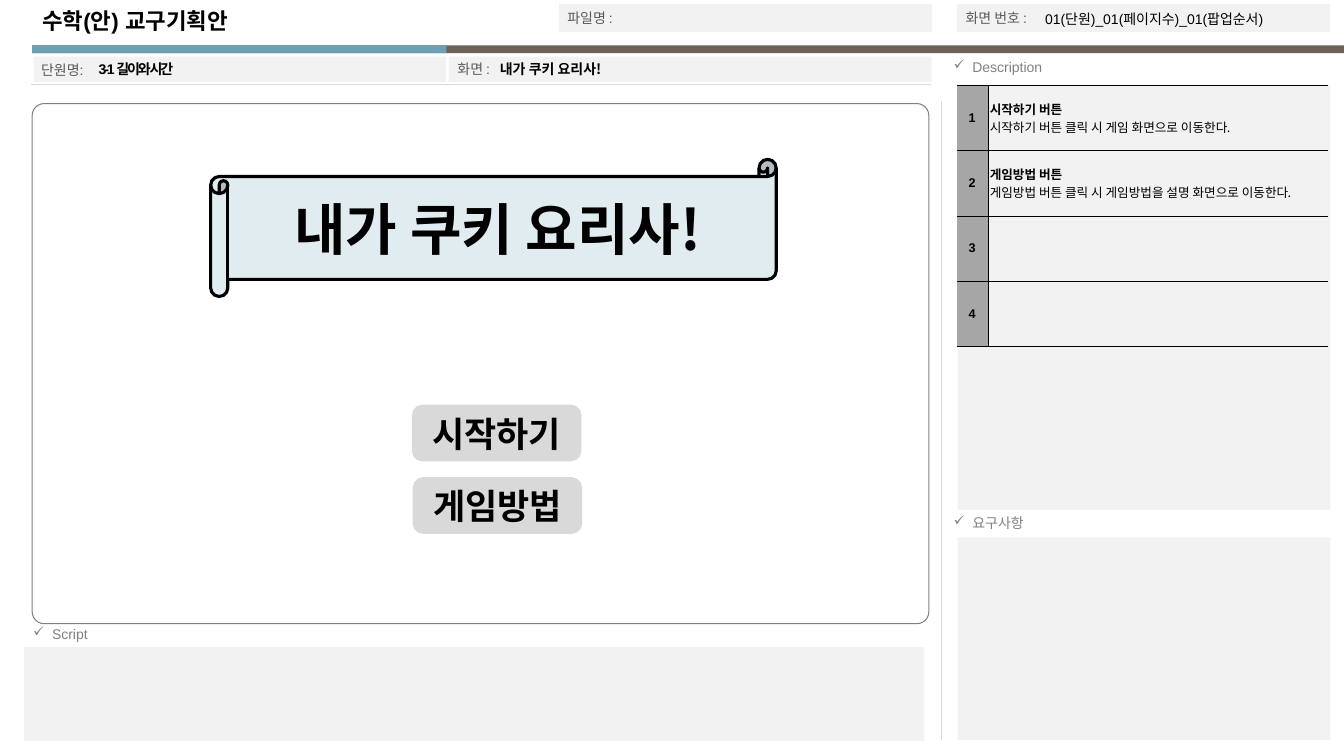
from dataclasses import dataclass

from lxml import etree
from pptx import Presentation
from pptx.dml.color import RGBColor
from pptx.enum import shapes, text
from pptx.oxml import ns
from pptx.util import Pt


@dataclass(frozen=True)
class Theme:
    latin: str = "Arial"
    korean: str = "Noto Sans CJK KR"
    black: str = "000000"
    white: str = "FFFFFF"
    panel: str = "F2F2F2"
    rule: str = "D9D9D9"
    heading: str = "808080"
    label: str = "595959"
    number: str = "A6A6A6"
    teal: str = "6BA1B2"
    brown: str = "6D6359"
    scroll: str = "E1ECF0"
    cell: float = 9
    body: float = 10
    title: float = 16
    button: float = 25
    banner: float = 40


THEME = Theme()
SHAPE = shapes.MSO_SHAPE
ANCHOR = text.MSO_ANCHOR


def points(*lengths):
    return [Pt(length) for length in lengths]


def add_xml(parent, tag, **attributes):
    return etree.SubElement(parent, ns.qn(tag), attributes)


def style(para, size, color=THEME.black, bold=False, latin=THEME.latin, spacing=None):
    font = para.font
    font.size = Pt(size)
    font.bold = bold
    font.name = latin
    font.color.rgb = RGBColor.from_string(color)
    properties = para._p.pPr.find(ns.qn("a:defRPr"))
    add_xml(properties, "a:ea", typeface=THEME.korean)
    if spacing is not None:
        properties.set("spc", str(spacing))


def add_block(page, area, fill, kind=SHAPE.RECTANGLE, line=None, width=0.75):
    block = page.shapes.add_shape(kind, *points(*area))
    block.shadow.inherit = False
    block.fill.solid()
    block.fill.fore_color.rgb = RGBColor.from_string(fill)
    if line:
        block.line.color.rgb = RGBColor.from_string(line)
        block.line.width = Pt(width)
    else:
        block.line.fill.background()
    return block


def add_captioned(page, area, caption, size, fill, kind, line):
    block = add_block(page, area, fill, kind, line, 2.25)
    frame = block.text_frame
    frame.word_wrap = True
    frame.vertical_anchor = ANCHOR.MIDDLE
    para = frame.paragraphs[0]
    para.text = caption
    para.alignment = text.PP_ALIGN.CENTER
    style(para, size, bold=True, latin=THEME.korean)


def add_text(page, area, words, color=THEME.black, anchor=ANCHOR.MIDDLE, **look):
    box = page.shapes.add_textbox(*points(*area))
    frame = box.text_frame
    frame.word_wrap = True
    frame.vertical_anchor = anchor
    para = frame.paragraphs[0]
    para.text = words
    style(para, THEME.body, color, **look)
    return para


def add_section(page, heading_area, words, panel_area):
    para = add_text(page, heading_area, words, THEME.heading, ANCHOR.TOP)
    properties = para._p.get_or_add_pPr()
    properties.set("marL", str(Pt(13.5)))
    properties.set("indent", str(-Pt(13.5)))
    bullet = etree.Element(ns.qn("a:buChar"), {"char": "✓"})
    properties.insert(0, bullet)
    add_block(page, panel_area, THEME.panel)


def add_field(page, panel_area, label_area, words):
    add_block(page, panel_area, THEME.panel)
    add_text(page, label_area, words, THEME.label)


def add_rule(page, *ends):
    rule = page.shapes.add_connector(shapes.MSO_CONNECTOR.STRAIGHT, *points(*ends))
    rule.line.color.rgb = RGBColor.from_string(THEME.rule)
    rule.line.width = Pt(0.75)
    add_xml(rule._element.spPr, "a:effectLst")


def set_borders(cell, drawn):
    properties = cell._tc.get_or_add_tcPr()
    for index, side in enumerate("LRTB"):
        border = etree.Element(ns.qn(f"a:ln{side}"), {"w": str(Pt(0.25))})
        if side in drawn:
            add_xml(add_xml(border, "a:solidFill"), "a:srgbClr", val=THEME.black)
        else:
            add_xml(border, "a:noFill")
        properties.insert(index, border)


def fill_cell(cell, lines, borders, centered=False):
    cell.vertical_anchor = ANCHOR.MIDDLE
    cell.margin_left = cell.margin_right = Pt(1.44)
    cell.margin_top = cell.margin_bottom = Pt(1.44)
    frame = cell.text_frame
    frame.text = "\n".join(lines)
    for index, para in enumerate(frame.paragraphs):
        latin = THEME.latin if centered else THEME.korean
        style(para, THEME.cell, bold=index == 0, latin=latin)
        if centered:
            para.alignment = text.PP_ALIGN.CENTER
            para.space_before = Pt(1.8)
    set_borders(cell, borders)


def add_descriptions(page, descriptions):
    frame = page.shapes.add_table(len(descriptions), 2, *points(683.3, 60.8, 265, 186.8))
    table = frame.table
    table.first_row = table.horz_banding = False
    for column, width in zip(table.columns, points(22.3, 242.7)):
        column.width = width
    for number, (row, lines) in enumerate(zip(table.rows, descriptions), 1):
        row.height = Pt(46.7)
        index_cell, text_cell = row.cells
        fill_cell(index_cell, [str(number)], "RTB", centered=True)
        index_cell.fill.solid()
        index_cell.fill.fore_color.rgb = RGBColor.from_string(THEME.number)
        fill_cell(text_cell, lines, "LTB")
        text_cell.fill.background()


def set_title(page, words):
    title = page.shapes.title
    title.left, title.top, title.width, title.height = points(23, 1.4, 374.4, 26.6)
    frame = title.text_frame
    frame.text = words
    frame.auto_size = text.MSO_AUTO_SIZE.NONE
    frame.vertical_anchor = ANCHOR.MIDDLE
    para = frame.paragraphs[0]
    para.alignment = text.PP_ALIGN.LEFT
    style(para, THEME.title, bold=True)


def main():
    deck = Presentation()
    deck.slide_width, deck.slide_height = points(960, 540)
    page = deck.slides.add_slide(deck.slide_layouts[5])
    set_title(page, "수학(안) 교구기획안")

    add_block(page, (23, 32.4, 937, 5.6), THEME.brown)
    add_block(page, (23, 32.4, 296, 5.6), THEME.teal)
    add_rule(page, 672.5, 72, 672.5, 528.5)
    add_rule(page, 22.3, 60.5, 665.3, 60.5)

    add_section(page, (674, 38.2, 286, 19.4), "Description", (684, 60.5, 266.4, 303.8))
    add_section(page, (674, 364.3, 286, 19.4), "요구사항", (684, 383.8, 266.4, 144.7))
    add_section(page, (16.6, 443.5, 283.7, 22.3), "Script", (17.3, 462.2, 643, 67))

    add_field(page, (24, 40.5, 294.5, 18), (22.3, 41, 263.5, 18), "단원명:")
    add_field(page, (320.5, 40.5, 345, 18), (319.7, 40.3, 263.5, 18), "화면 :")
    add_field(page, (399.4, 2.9, 266.4, 20), (398.2, 3.6, 263.5, 18), "파일명 :")
    add_field(page, (683.5, 2.9, 266.4, 20), (682.6, 3.6, 263.5, 18), "화면 번호 :")

    screen = add_block(page, (23, 74, 640.5, 371.5), THEME.white,
                       SHAPE.ROUNDED_RECTANGLE, THEME.heading)
    screen.adjustments[0] = 0.023

    add_text(page, (63.4, 40.3, 280, 18), "3-1 길이와 시간", bold=True, spacing=-150)
    add_text(page, (350, 40.3, 315.4, 18), "내가 쿠키 요리사!", bold=True,
             latin=THEME.korean)
    add_text(page, (739.4, 4.3, 208.8, 18), "01(단원)_01(페이지수)_01(팝업순서)")

    add_descriptions(page, [
        ["시작하기 버튼", "시작하기 버튼 클릭 시 게임 화면으로 이동한다."],
        ["게임방법 버튼", "게임방법 버튼 클릭 시 게임방법을 설명 화면으로 이동한다."],
        [],
        [],
    ])

    add_captioned(page, (150.5, 113.8, 404, 98), "내가 쿠키 요리사!", THEME.banner,
                  THEME.scroll, SHAPE.HORIZONTAL_SCROLL, THEME.black)
    for index, caption in enumerate(["시작하기", "게임방법"]):
        add_captioned(page, (295.4 + 0.5 * index, 290.2 + 51.8 * index, 118.8, 38.2),
                      caption, THEME.button, THEME.rule, SHAPE.ROUNDED_RECTANGLE, THEME.rule)

    deck.save("out.pptx")


if __name__ == "__main__":
    main()
